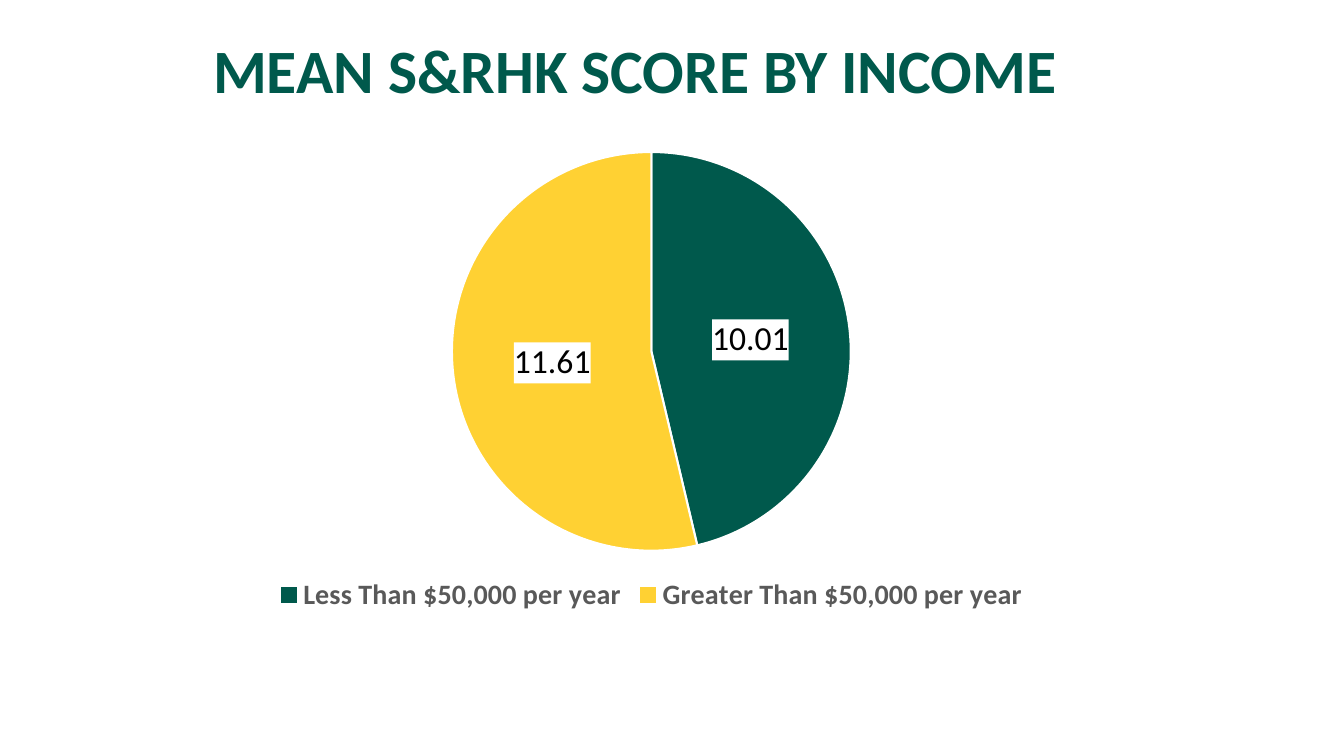
from dataclasses import dataclass

import lxml.etree
import pptx
import pptx.chart.chart
import pptx.chart.data
import pptx.dml.color
import pptx.enum.chart
import pptx.enum.text
import pptx.oxml
import pptx.oxml.ns
import pptx.presentation
import pptx.slide
import pptx.util

SLIDE_WIDTH = pptx.util.Inches(13.33)
SLIDE_HEIGHT = pptx.util.Inches(7.5)
FONT = "Calibri"
GREEN = pptx.dml.color.RGBColor(0x00, 0x59, 0x4C)
YELLOW = pptx.dml.color.RGBColor(0xFF, 0xD1, 0x33)
GRAY = pptx.dml.color.RGBColor(0x59, 0x59, 0x59)
BLACK = pptx.dml.color.RGBColor(0x00, 0x00, 0x00)
WHITE = pptx.dml.color.RGBColor(0xFF, 0xFF, 0xFF)


@dataclass(frozen=True)
class Area:
    left: float
    top: float
    width: float
    height: float

    def lengths(self) -> tuple[int, int, int, int]:
        return (
            round(self.left / 100 * SLIDE_WIDTH),
            round(self.top / 100 * SLIDE_HEIGHT),
            round(self.width / 100 * SLIDE_WIDTH),
            round(self.height / 100 * SLIDE_HEIGHT),
        )


@dataclass(frozen=True)
class IncomeGroup:
    name: str
    score: float
    color: pptx.dml.color.RGBColor


TITLE_AREA = Area(4.13, 0, 86.27, 19.33)
CHART_AREA = Area(5.33, 18.27, 86.27, 63.47)
INCOME_GROUPS = (
    IncomeGroup("Less Than $50,000 per year", 10.01, GREEN),
    IncomeGroup("Greater Than $50,000 per year", 11.61, YELLOW),
)


def format_font(font, size: float, color: pptx.dml.color.RGBColor, bold: bool) -> None:
    font.name = FONT
    font.size = pptx.util.Pt(size)
    font.bold = bold
    font.color.rgb = color


def add_title(slide: pptx.slide.Slide, text: str) -> None:
    title = slide.shapes.title
    title.left, title.top, title.width, title.height = TITLE_AREA.lengths()
    text_frame = title.text_frame
    text_frame.text = text
    text_frame.word_wrap = True
    text_frame.vertical_anchor = pptx.enum.text.MSO_ANCHOR.MIDDLE
    paragraph = text_frame.paragraphs[0]
    paragraph.alignment = pptx.enum.text.PP_ALIGN.CENTER
    paragraph.line_spacing = 0.9
    format_font(paragraph.runs[0].font, 44, GREEN, True)


def format_labels(plot) -> None:
    plot.has_data_labels = True
    labels = plot.data_labels
    labels.show_value = True
    labels.show_percentage = False
    labels.number_format = "0.00"
    labels.number_format_is_linked = False
    labels.position = pptx.enum.chart.XL_LABEL_POSITION.CENTER
    format_font(labels.font, 24, BLACK, False)
    background = pptx.oxml.parse_xml(
        f'<c:spPr {pptx.oxml.ns.nsdecls("c", "a")}>'
        f'<a:solidFill><a:srgbClr val="{WHITE}"/></a:solidFill></c:spPr>'
    )
    labels._element.find(pptx.oxml.ns.qn("c:txPr")).addprevious(background)


def add_score_chart(slide: pptx.slide.Slide) -> None:
    chart_data = pptx.chart.data.CategoryChartData()
    chart_data.categories = [group.name for group in INCOME_GROUPS]
    chart_data.add_series("Series 1", [group.score for group in INCOME_GROUPS])
    chart = slide.shapes.add_chart(
        pptx.enum.chart.XL_CHART_TYPE.PIE, *CHART_AREA.lengths(), chart_data
    ).chart
    chart.has_title = False
    format_font(chart.font, 10, BLACK, False)
    chart.has_legend = True
    chart.legend.position = pptx.enum.chart.XL_LEGEND_POSITION.BOTTOM
    chart.legend.include_in_layout = False
    format_font(chart.legend.font, 20, GRAY, True)
    plot = chart.plots[0]
    plot.vary_by_categories = True
    for index, group in enumerate(INCOME_GROUPS):
        slice_format = plot.series[0].points[index].format
        slice_format.fill.solid()
        slice_format.fill.fore_color.rgb = group.color
        slice_format.line.color.rgb = WHITE
        slice_format.line.width = pptx.util.Pt(1.5)
    format_labels(plot)


def main() -> None:
    presentation = pptx.Presentation()
    presentation.slide_width = SLIDE_WIDTH
    presentation.slide_height = SLIDE_HEIGHT
    slide = presentation.slides.add_slide(presentation.slide_layouts[5])
    add_title(slide, "MEAN S&RHK SCORE BY INCOME")
    add_score_chart(slide)
    presentation.save("out.pptx")


if __name__ == "__main__":
    main()
